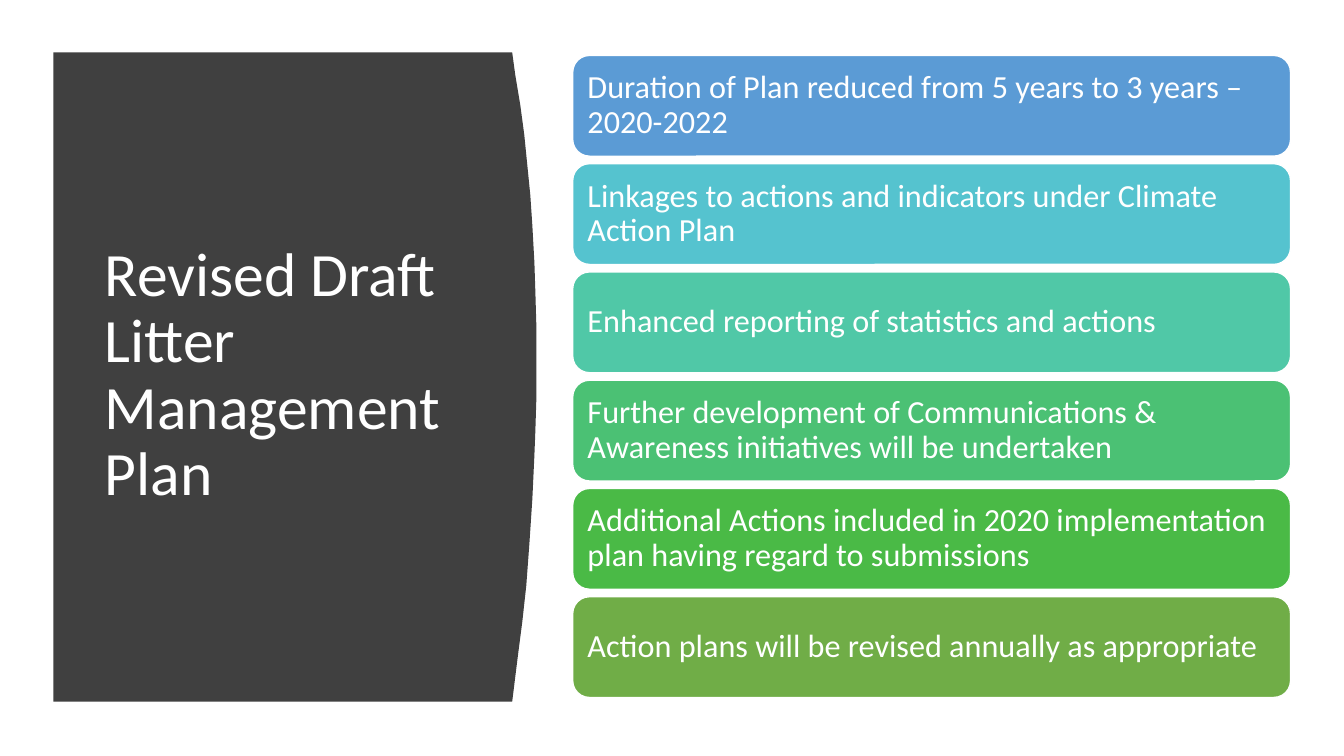
from pptx import Presentation
from pptx.dml.color import RGBColor
from pptx.enum import shapes, text
from pptx.util import Inches, Pt

WHITE = RGBColor(0xFF, 0xFF, 0xFF)
CHARCOAL = RGBColor(0x40, 0x40, 0x40)
BLUE = RGBColor(0x5B, 0x9B, 0xD5)
TURQUOISE = RGBColor(0x55, 0xC3, 0xCF)
TEAL = RGBColor(0x50, 0xC8, 0xA7)
MINT = RGBColor(0x4B, 0xC1, 0x74)
GREEN = RGBColor(0x4A, 0xBA, 0x46)
OLIVE = RGBColor(0x70, 0xAD, 0x47)

FONT = "Calibri"
TITLE = "Revised Draft Litter Management Plan"
CHANGES = [
    ("Duration of Plan reduced from 5 years to 3 years – 2020-2022", BLUE),
    ("Linkages to actions and indicators under Climate Action Plan", TURQUOISE),
    ("Enhanced reporting of statistics and actions", TEAL),
    ("Further development of Communications & Awareness initiatives will be undertaken", MINT),
    ("Additional Actions included in 2020 implementation plan having regard to submissions", GREEN),
    ("Action plans will be revised annually as appropriate", OLIVE),
]

PANEL_LEFT, PANEL_TOP, PANEL_BOTTOM = 0.53, 0.52, 6.96
PANEL_EDGE = [
    (5.08, PANEL_TOP), (5.11, 0.74), (5.16, 1.04), (5.2, 1.34), (5.23, 1.64),
    (5.26, 1.94), (5.28, 2.24), (5.3, 2.6), (5.31, 2.9), (5.32, 3.25),
    (5.32, 3.94), (5.31, 4.27), (5.3, 4.52), (5.28, 4.95), (5.25, 5.4),
    (5.22, 5.81), (5.18, 6.17), (5.14, 6.48), (5.11, 6.72), (5.08, PANEL_BOTTOM),
]
BAR_LEFT, BAR_WIDTH, BAR_HEIGHT = 5.68, 7.12, 1
FIRST_BAR_TOP, LAST_BAR_TOP = 0.55, 5.92


def write_text(shape, content, size, inset):
    frame = shape.text_frame
    margin = Inches(inset)
    frame_format = {
        "word_wrap": True,
        "vertical_anchor": text.MSO_ANCHOR.MIDDLE,
        "margin_left": margin,
        "margin_right": margin,
        "margin_top": margin,
        "margin_bottom": margin,
    }
    for name, value in frame_format.items():
        setattr(frame, name, value)
    paragraph = frame.paragraphs[0]
    paragraph.text = content
    paragraph.alignment = text.PP_ALIGN.LEFT
    paragraph.line_spacing = 0.9
    font = paragraph.runs[0].font
    font.name = FONT
    font.size = Pt(size)
    font.color.rgb = WHITE


def fill_shape(shape, color):
    shape.shadow.inherit = False
    shape.fill.solid()
    shape.fill.fore_color.rgb = color


def add_curved_panel(slide):
    builder = slide.shapes.build_freeform(Inches(PANEL_LEFT), Inches(PANEL_TOP))
    outline = PANEL_EDGE + [(PANEL_LEFT, PANEL_BOTTOM)]
    builder.add_line_segments([(Inches(x), Inches(y)) for x, y in outline], close=True)
    panel = builder.convert_to_shape()
    fill_shape(panel, CHARCOAL)
    panel.line.fill.background()


def add_title(slide):
    title = slide.shapes.add_textbox(Inches(0.94), Inches(1.11), Inches(3.74), Inches(5.24))
    write_text(title, TITLE, size=44, inset=0.1)


def add_change_bar(slide, top, content, color):
    bar = slide.shapes.add_shape(
        shapes.MSO_SHAPE.ROUNDED_RECTANGLE,
        Inches(BAR_LEFT), Inches(top), Inches(BAR_WIDTH), Inches(BAR_HEIGHT),
    )
    fill_shape(bar, color)
    bar.line.color.rgb = WHITE
    bar.line.width = Pt(1)
    # The rounded rectangle already insets its text by about 0.05 inch.
    write_text(bar, content, size=23, inset=0.1)


def main():
    presentation = Presentation()
    presentation.slide_width = Inches(13.33)
    presentation.slide_height = Inches(7.5)
    slide = presentation.slides.add_slide(presentation.slide_layouts[6])
    add_curved_panel(slide)
    add_title(slide)
    pitch = (LAST_BAR_TOP - FIRST_BAR_TOP) / (len(CHANGES) - 1)
    for index, (content, color) in enumerate(CHANGES):
        add_change_bar(slide, FIRST_BAR_TOP + index * pitch, content, color)
    presentation.save("out.pptx")


if __name__ == "__main__":
    main()
